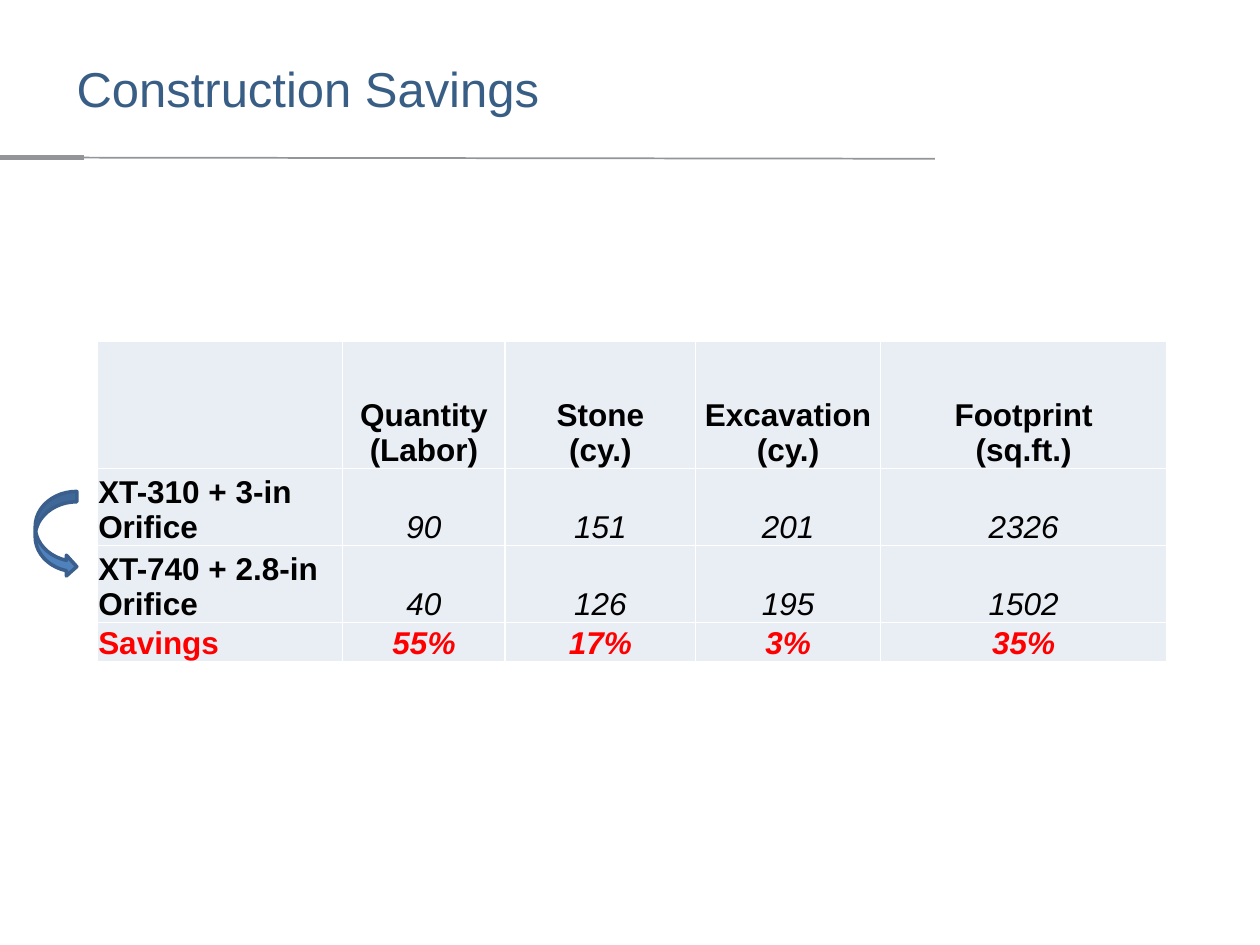
from lxml.etree import SubElement
from pptx import Presentation
from pptx.dml.color import RGBColor
from pptx.enum.shapes import MSO_CONNECTOR, MSO_SHAPE
from pptx.enum.text import MSO_ANCHOR, PP_ALIGN
from pptx.oxml.ns import qn
from pptx.util import Inches, Pt

COLORS = {
    "title": "395E85",
    "rule": "939598",
    "cell": "E9EDF4",
    "border": "FFFFFF",
    "text": "000000",
    "savings": "FF0000",
    "arrow": "4F81BD",
    "arrow_line": "3A5F8C",
}
HEADER = {"bold": True}
VALUE = {"italic": True}
SAVINGS = {"bold": True, "color": "savings"}
COLUMN_WIDTHS = [1.95, 1.29, 1.51, 1.47, 2.27]
ROW_HEIGHTS = [1.01, 0.57, 0.57, 0.3]
ROWS = [
    (HEADER, HEADER, ["", "Quantity\n(Labor)", "Stone\n(cy.)", "Excavation (cy.)", "Footprint\n(sq.ft.)"]),
    (HEADER, VALUE, ["XT-310 + 3-in Orifice", "90", "151", "201", "2326"]),
    (HEADER, VALUE, ["XT-740 + 2.8-in Orifice", "40", "126", "195", "1502"]),
    (SAVINGS, {**SAVINGS, "italic": True}, ["Savings", "55%", "17%", "3%", "35%"]),
]


class SlideBuilder:
    def __init__(self, slide, font_name="Arial"):
        self.slide = slide
        self.font_name = font_name

    def color(self, name):
        return RGBColor.from_string(COLORS[name])

    def fill_text(self, text_frame, text, alignment=PP_ALIGN.LEFT, color="text", **formats):
        text_frame.text = text
        values = {"name": self.font_name, "size": Pt(18), "bold": False, "italic": False, **formats}
        for paragraph in text_frame.paragraphs:
            paragraph.alignment = alignment
            for attribute, value in values.items():
                setattr(paragraph.font, attribute, value)
            paragraph.font.color.rgb = self.color(color)

    def text(self, box, text, **formats):
        text_frame = self.slide.shapes.add_textbox(*map(Inches, box)).text_frame
        text_frame.word_wrap = True
        text_frame.vertical_anchor = MSO_ANCHOR.MIDDLE
        self.fill_text(text_frame, text, **formats)

    def line(self, points, color, width):
        connector = self.slide.shapes.add_connector(MSO_CONNECTOR.STRAIGHT, *map(Inches, points))
        connector.line.color.rgb = self.color(color)
        connector.line.width = Pt(width)
        SubElement(connector._element.spPr, qn("a:effectLst"))

    def shape(self, kind, box, fill, line, width):
        shape = self.slide.shapes.add_shape(kind, *map(Inches, box))
        shape.shadow.inherit = False
        shape.fill.solid()
        shape.fill.fore_color.rgb = self.color(fill)
        shape.line.color.rgb = self.color(line)
        shape.line.width = Pt(width)

    def style_cell(self, cell):
        margins = {"margin_left": 0.01, "margin_top": 0.01, "margin_right": 0.01, "margin_bottom": 0}
        for attribute, value in margins.items():
            setattr(cell, attribute, Inches(value))
        cell.vertical_anchor = MSO_ANCHOR.BOTTOM
        properties = cell._tc.get_or_add_tcPr()
        for side in ("L", "R", "T", "B"):
            border = SubElement(properties, qn(f"a:ln{side}"), w=str(Pt(1)))
            fill = SubElement(border, qn("a:solidFill"))
            SubElement(fill, qn("a:srgbClr"), val=COLORS["border"])
        cell.fill.solid()
        cell.fill.fore_color.rgb = self.color("cell")

    def table(self, left, top, widths, heights, rows):
        box = map(Inches, (left, top, sum(widths), sum(heights)))
        table = self.slide.shapes.add_table(len(heights), len(widths), *box).table
        for column, width in zip(table.columns, widths):
            column.width = Inches(width)
        for row, height, (label_format, value_format, texts) in zip(table.rows, heights, rows):
            row.height = Inches(height)
            for index, (cell, text) in enumerate(zip(row.cells, texts)):
                self.style_cell(cell)
                formats = value_format if index else label_format
                alignment = PP_ALIGN.CENTER if index else PP_ALIGN.LEFT
                self.fill_text(cell.text_frame, text, alignment, **formats)


def main():
    presentation = Presentation()
    presentation.slide_width = Inches(10)
    presentation.slide_height = Inches(7.5)
    builder = SlideBuilder(presentation.slides.add_slide(presentation.slide_layouts[6]))
    builder.line((7.42, 1.26, 0, 1.25), "rule", 1)
    builder.line((0.67, 1.25, 0, 1.25), "rule", 3)
    builder.text((0.51, 0.13, 7.35, 1.13), "Construction Savings", color="title", size=Pt(28))
    builder.table(0.77, 2.71, COLUMN_WIDTHS, ROW_HEIGHTS, ROWS)
    builder.shape(MSO_SHAPE.CURVED_RIGHT_ARROW, (0.28, 3.9, 0.33, 0.68), "arrow", "arrow_line", 2)
    presentation.save("out.pptx")


if __name__ == "__main__":
    main()
